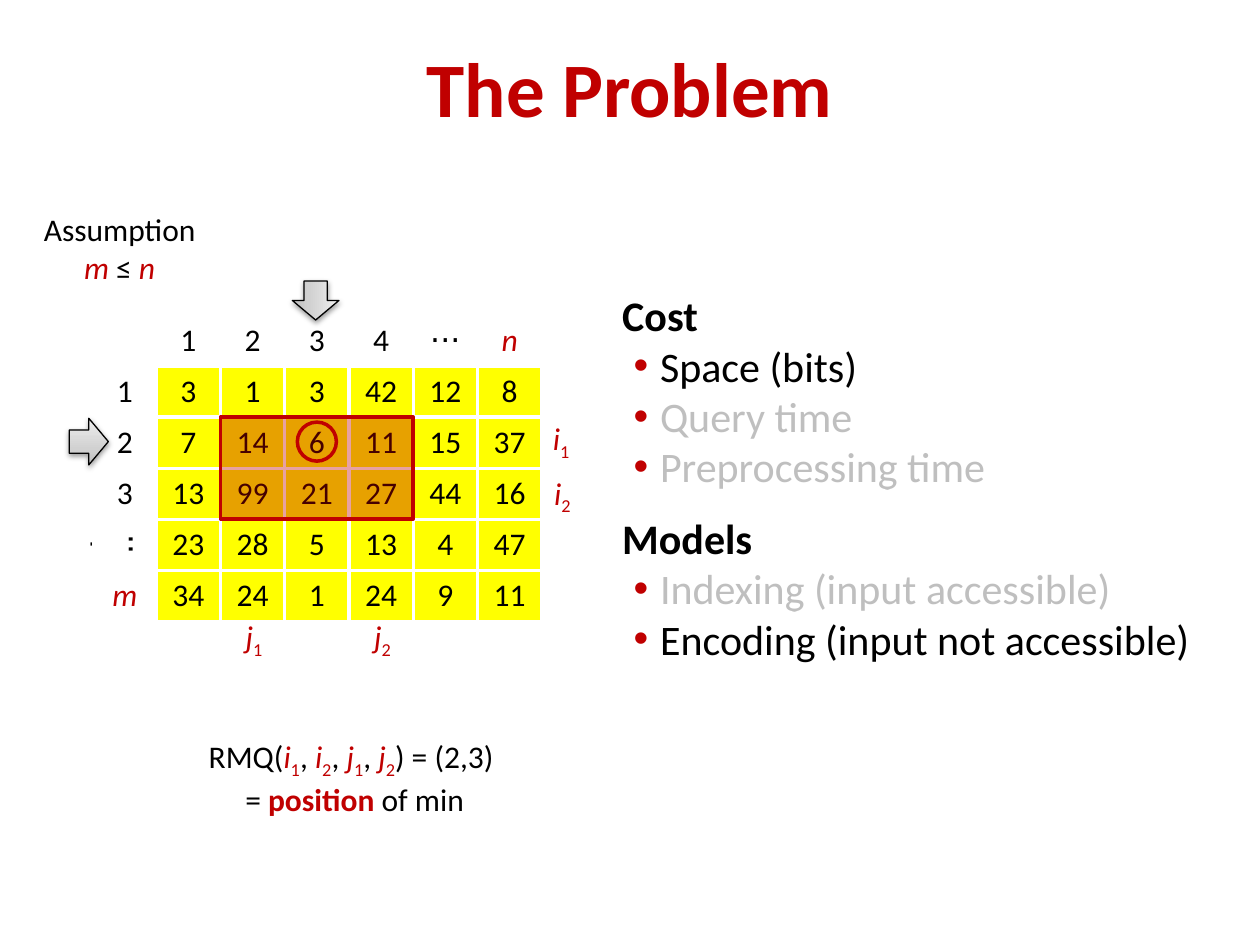
from pptx import Presentation
from pptx.dml.color import RGBColor
from pptx.enum.shapes import MSO_SHAPE as Shape
from pptx.enum.text import MSO_ANCHOR as Anchor, MSO_AUTO_SIZE as AutoSize, PP_ALIGN as Align
from pptx.oxml import parse_xml
from pptx.oxml.ns import nsdecls
from pptx.util import Inches, Pt

RED, BLACK, WHITE, YELLOW = "C00000", "000000", "FFFFFF", "FFFF00"
PLAIN = {"color": BLACK}
BOLD = {"color": BLACK, "bold": True}
KEY = {"color": RED, "bold": True}
VARIABLE = {"color": RED, "italic": True}
SUBSCRIPT = {"color": RED, "baseline": -25000}


def rgb(value):
    return RGBColor.from_string(value)


def xml(markup):
    return parse_xml(f'<a:root {nsdecls("a")}>{markup}</a:root>')[0]


def indexed(letter, number):
    return [(letter, VARIABLE), (number, SUBSCRIPT)]


class ProblemSlide:
    """Draws the elements of one slide in a shared style."""

    font_name = "Calibri"
    arrow_stops = ((0, "BDBDBD"), (35, "D1D1D1"), (100, "EEEEEE"))

    def __init__(self, presentation):
        self.slide = presentation.slides.add_slide(presentation.slide_layouts[6])

    def add_runs(self, paragraph, runs, size=18, align=Align.CENTER):
        paragraph.alignment = align
        for text, style in runs:
            run = paragraph.add_run()
            run.text = text
            run.font.color.rgb = rgb(style["color"])
            formats = {"name": self.font_name, "size": Pt(size),
                       "bold": style.get("bold", False), "italic": style.get("italic", False)}
            for name, value in formats.items():
                setattr(run.font, name, value)
            if "baseline" in style:
                run._r.get_or_add_rPr().set("baseline", str(style["baseline"]))

    def text(self, box, lines, size=18, align=Align.CENTER, anchor=Anchor.TOP, grow=True):
        frame = self.slide.shapes.add_textbox(*map(Inches, box)).text_frame
        formats = {"word_wrap": True, "vertical_anchor": anchor,
                   "auto_size": AutoSize.SHAPE_TO_FIT_TEXT if grow else AutoSize.NONE}
        for name, value in formats.items():
            setattr(frame, name, value)
        for index, runs in enumerate(lines):
            paragraph = frame.add_paragraph() if index else frame.paragraphs[0]
            self.add_runs(paragraph, runs, size, align)
        return frame

    def outline(self, box, groups):
        lines = [(text, level) for heading, items in groups
                 for text, level in [(heading, 0)] + [(item, 1) for item in items]]
        frame = self.text(box, [[(text, PLAIN if level else BOLD)] for text, level in lines],
                          size=24, align=Align.LEFT, grow=False)
        for index, (paragraph, (_, level)) in enumerate(zip(frame.paragraphs, lines)):
            properties = paragraph._p.get_or_add_pPr()
            properties.set("marL", str(Inches(0.3)))
            properties.set("indent", str(Inches(-0.21 if level else -0.3)))
            if level and index + 1 < len(lines) and not lines[index + 1][1]:
                paragraph.space_after = Pt(12)
            if level:
                for markup in (f'<a:buClr><a:srgbClr val="{RED}"/></a:buClr>',
                               '<a:buFont typeface="Arial"/>', '<a:buChar char="•"/>'):
                    properties.append(xml(markup))

    def shape(self, kind, box, fill=None, opacity=100, line=None, width=2):
        shape = self.slide.shapes.add_shape(kind, *map(Inches, box))
        shape.shadow.inherit = False
        if fill:
            shape.fill.solid()
            shape.fill.fore_color.rgb = rgb(fill)
            color = shape._element.spPr.find("{*}solidFill/{*}srgbClr")
            color.append(xml(f'<a:alpha val="{opacity * 1000}"/>'))
        else:
            shape.fill.background()
        if line:
            shape.line.color.rgb = rgb(line)
            shape.line.width = Pt(width)
        else:
            shape.line.fill.background()
        return shape

    def block_arrow(self, box, rotation=0):
        shape = self.shape(Shape.RIGHT_ARROW, box, line=BLACK, width=0.75)
        shape.rotation = rotation
        stops = "".join(f'<a:gs pos="{position * 1000}"><a:srgbClr val="{color}"/></a:gs>'
                        for position, color in self.arrow_stops)
        properties = shape._element.spPr
        properties.replace(properties.find("{*}noFill"), xml(
            f'<a:gradFill rotWithShape="1"><a:gsLst>{stops}</a:gsLst>'
            '<a:lin ang="16200000" scaled="0"/></a:gradFill>'))
        properties.find("{*}effectLst").append(xml(
            f'<a:outerShdw blurRad="{Pt(3.1)}" dist="{Pt(1.6)}" dir="5400000" rotWithShape="0">'
            f'<a:srgbClr val="{BLACK}"><a:alpha val="38000"/></a:srgbClr></a:outerShdw>'))

    def matrix(self, box, rows):
        table = self.slide.shapes.add_table(len(rows), len(rows[0]), *map(Inches, box)).table
        table.first_row = table.horz_banding = False
        for index, column in enumerate(table.columns):
            column.width = Inches(0.51 if index else 0.5)
        for row_index, values in enumerate(rows):
            table.rows[row_index].height = Inches(box[3] / len(rows))
            for column_index, value in enumerate(values):
                cell = table.cell(row_index, column_index)
                style = VARIABLE if value in ("m", "n") else PLAIN
                if value:
                    self.add_runs(cell.text_frame.paragraphs[0], [(value, style)])
                if row_index and column_index:
                    cell.fill.solid()
                    cell.fill.fore_color.rgb = rgb(YELLOW)
                else:
                    cell.fill.background()
                properties = cell._tc.get_or_add_tcPr()
                if value == "⋅⋅⋅" and column_index == 0:
                    properties.set("vert", "vert")
                for position, side in enumerate("LRTB"):
                    properties.insert(position, xml(
                        f'<a:ln{side} w="{Pt(2.25)}"><a:solidFill><a:srgbClr val="{WHITE}"/>'
                        f'</a:solidFill></a:ln{side}>'))


def main():
    presentation = Presentation()
    presentation.slide_width, presentation.slide_height = Inches(10), Inches(7.5)
    page = ProblemSlide(presentation)

    page.matrix((0.74, 2.5, 3.56, 2.43), [
        ["", "1", "2", "3", "4", "⋅⋅⋅", "n"],
        ["1", "3", "1", "3", "42", "12", "8"],
        ["2", "7", "14", "6", "11", "15", "37"],
        ["3", "13", "99", "21", "27", "44", "16"],
        ["⋅⋅⋅", "23", "28", "5", "13", "4", "47"],
        ["m", "34", "24", "1", "24", "9", "11"],
    ])
    page.shape(Shape.RECTANGLE, (1.75, 3.31, 1.53, 0.81), fill=RED, opacity=37, line=RED)
    for letter, number, left, top in (("i", "1", 4.29, 3.28), ("i", "2", 4.3, 3.71),
                                      ("j", "2", 2.87, 4.85), ("j", "1", 1.85, 4.85)):
        page.text((left, top, 0.38, 0.4), [indexed(letter, number)], align=Align.LEFT)

    page.outline((4.84, 2.25, 5.04, 3.22), [
        ("Cost", ["Space (bits)", "Query time", "Preprocessing time"]),
        ("Models", ["Indexing (input accessible)", "Encoding (input not accessible)"]),
    ])

    comma = [(", ", PLAIN)]
    query = (indexed("i", "1") + comma + indexed("i", "2") + comma
             + indexed("j", "1") + comma + indexed("j", "2"))
    page.text((1.5, 5.8, 2.63, 0.71), [
        [("RMQ(", PLAIN), *query, (") = (2,3) ", PLAIN)],
        [("= ", PLAIN), ("position ", KEY), ("of min", PLAIN)],
    ])
    page.shape(Shape.OVAL, (2.36, 3.35, 0.31, 0.31), line=RED)
    page.block_arrow((0.55, 3.32, 0.31, 0.37))
    page.block_arrow((2.35, 2.2, 0.31, 0.37), rotation=90)
    page.text((0.21, 1.62, 1.48, 0.71), [
        [("Assumption", PLAIN)],
        [("m", VARIABLE), (" ≤ ", PLAIN), ("n", VARIABLE)],
    ])
    for veil in ((5.21, 3.14, 2.68, 0.74), (5.24, 4.5, 3.94, 0.35)):
        page.shape(Shape.RECTANGLE, veil, fill=WHITE, opacity=75)
    page.text((0, 0.06, 10, 1.25), [[("The Problem", KEY)]], size=44,
              anchor=Anchor.MIDDLE, grow=False)
    presentation.save("out.pptx")


if __name__ == "__main__":
    main()
